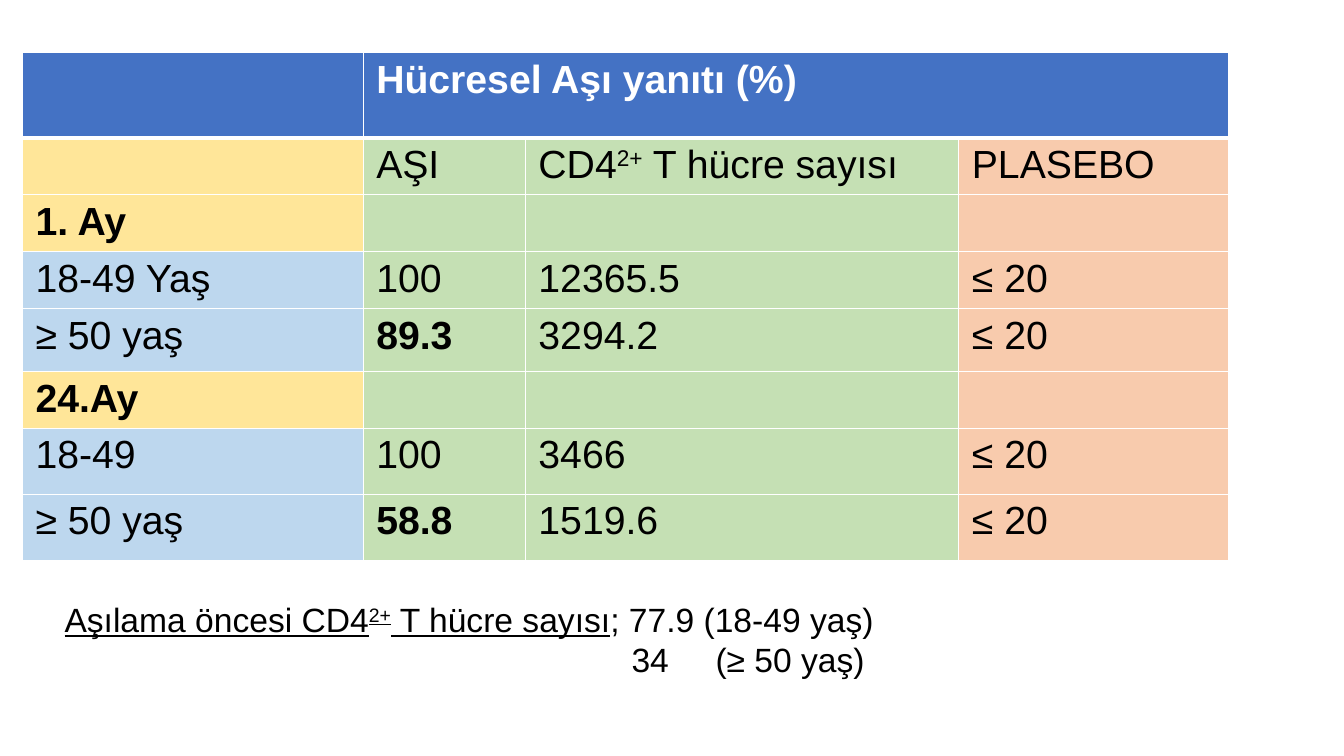
"""Builds a slide with a table of cellular vaccine responses and a baseline note."""
from lxml import etree
from pptx import Presentation
from pptx.dml.color import RGBColor
from pptx.oxml.ns import qn
from pptx.util import Pt

WHITE = RGBColor(0xFF, 0xFF, 0xFF)
BLACK = RGBColor(0, 0, 0)
BLUE = RGBColor(0x44, 0x72, 0xC4)
YELLOW = RGBColor(0xFF, 0xE6, 0x99)
GREEN = RGBColor(0xC5, 0xE0, 0xB4)
PEACH = RGBColor(0xF8, 0xCB, 0xAD)
SKY = RGBColor(0xBD, 0xD7, 0xEE)

BOLD = {"bold": True}
UNDER = {"underline": True}
SUP = {"sup": True}

HEADER = [BLUE] * 4
MONTH = [YELLOW, GREEN, GREEN, PEACH]
AGE = [SKY, GREEN, GREEN, PEACH]

COLS = [243.4, 115.9, 309.6, 193]
ROWS = [
    (60.7, HEADER, ["", [("Hücresel Aşı yanıtı (%)", {"bold": True, "color": WHITE})], "", ""]),
    (40.7, MONTH, ["", "AŞI", [("CD4", {}), ("2+", SUP), (" T hücre sayısı", {})], "PLASEBO"]),
    (40.7, MONTH, [[("1. Ay", BOLD)], "", "", ""]),
    (40.7, AGE, ["18-49 Yaş", "100", "12365.5", "≤ 20"]),
    (45, AGE, ["≥ 50 yaş", [("89.3", BOLD)], "3294.2", "≤ 20"]),
    (40.7, MONTH, [[("24.Ay", BOLD)], "", "", ""]),
    (47.1, AGE, ["18-49", "100", "3466", "≤ 20"]),
    (47.1, AGE, ["≥ 50 yaş", [("58.8", BOLD)], "1519.6", "≤ 20"]),
]
NOTE = [
    [("Aşılama öncesi CD4", UNDER), ("2+", UNDER | SUP), (" T hücre sayısı", UNDER),
     ("; 77.9 (18-49 yaş)", {})],
    [("\t34\t(≥ 50 yaş)", {})],
]
NOTE_TABS = [405, 465]


class Deck:
    """Holds the text style and the current slide."""

    def __init__(self, prs, font):
        self.font = font
        self.s = prs.slides.add_slide(prs.slide_layouts[6])

    def runs(self, p, parts, size):
        """Adds formatted runs to a paragraph."""
        for text, extra in parts:
            r = p.add_run()
            r.text = text
            fmt = {"name": self.font, "size": Pt(size), "bold": False, "color": BLACK} | extra
            r.font.color.rgb = fmt.pop("color")
            if fmt.pop("sup", False):
                r.font._element.set("baseline", "30000")
            for key, value in fmt.items():
                setattr(r.font, key, value)

    def borders(self, cell, bottom):
        """Draws white cell borders with the given bottom width."""
        tc_pr = cell._tc.get_or_add_tcPr()
        for side, width in (("L", 1), ("R", 1), ("T", 1), ("B", bottom)):
            ln = etree.SubElement(tc_pr, qn(f"a:ln{side}"), w=str(Pt(width)))
            fill = etree.SubElement(ln, qn("a:solidFill"))
            etree.SubElement(fill, qn("a:srgbClr"), val=str(WHITE))

    def table(self, x, y, cols, rows, size):
        """Adds a table whose first row is merged after its first cell."""
        height = sum(row[0] for row in rows)
        tbl = self.s.shapes.add_table(len(rows), len(cols), Pt(x), Pt(y),
                                      Pt(sum(cols)), Pt(height)).table
        for col, width in zip(tbl.columns, cols):
            col.width = Pt(width)
        for i, (height, fills, texts) in enumerate(rows):
            tbl.rows[i].height = Pt(height)
            for cell, fill, content in zip(tbl.rows[i].cells, fills, texts):
                self.borders(cell, 3 if i == 0 else 1)
                cell.fill.solid()
                cell.fill.fore_color.rgb = fill
                cell.margin_left = cell.margin_right = Pt(9.4)
                cell.margin_top = cell.margin_bottom = Pt(3.6)
                if content:
                    parts = [(content, {})] if isinstance(content, str) else content
                    self.runs(cell.text_frame.paragraphs[0], parts, size)
        tbl.cell(0, 1).merge(tbl.cell(0, len(cols) - 1))

    def text(self, x, y, w, h, paragraphs, size, tabs):
        """Adds a text box with left tab stops."""
        tf = self.s.shapes.add_textbox(Pt(x), Pt(y), Pt(w), Pt(h)).text_frame
        tf.word_wrap = True
        for i, parts in enumerate(paragraphs):
            p = tf.add_paragraph() if i else tf.paragraphs[0]
            tab_list = etree.SubElement(p._p.get_or_add_pPr(), qn("a:tabLst"))
            for tab in tabs:
                etree.SubElement(tab_list, qn("a:tab"), pos=str(Pt(tab)), algn="l")
            self.runs(p, parts, size)


def main():
    """Builds and saves the presentation."""
    prs = Presentation()
    prs.slide_width, prs.slide_height = Pt(960), Pt(540)
    deck = Deck(prs, "Arial")
    deck.table(16, 37.7, COLS, ROWS, 28)
    deck.text(39, 424, 650, 65.5, NOTE, 24, NOTE_TABS)
    prs.save("out.pptx")


if __name__ == "__main__":
    main()
